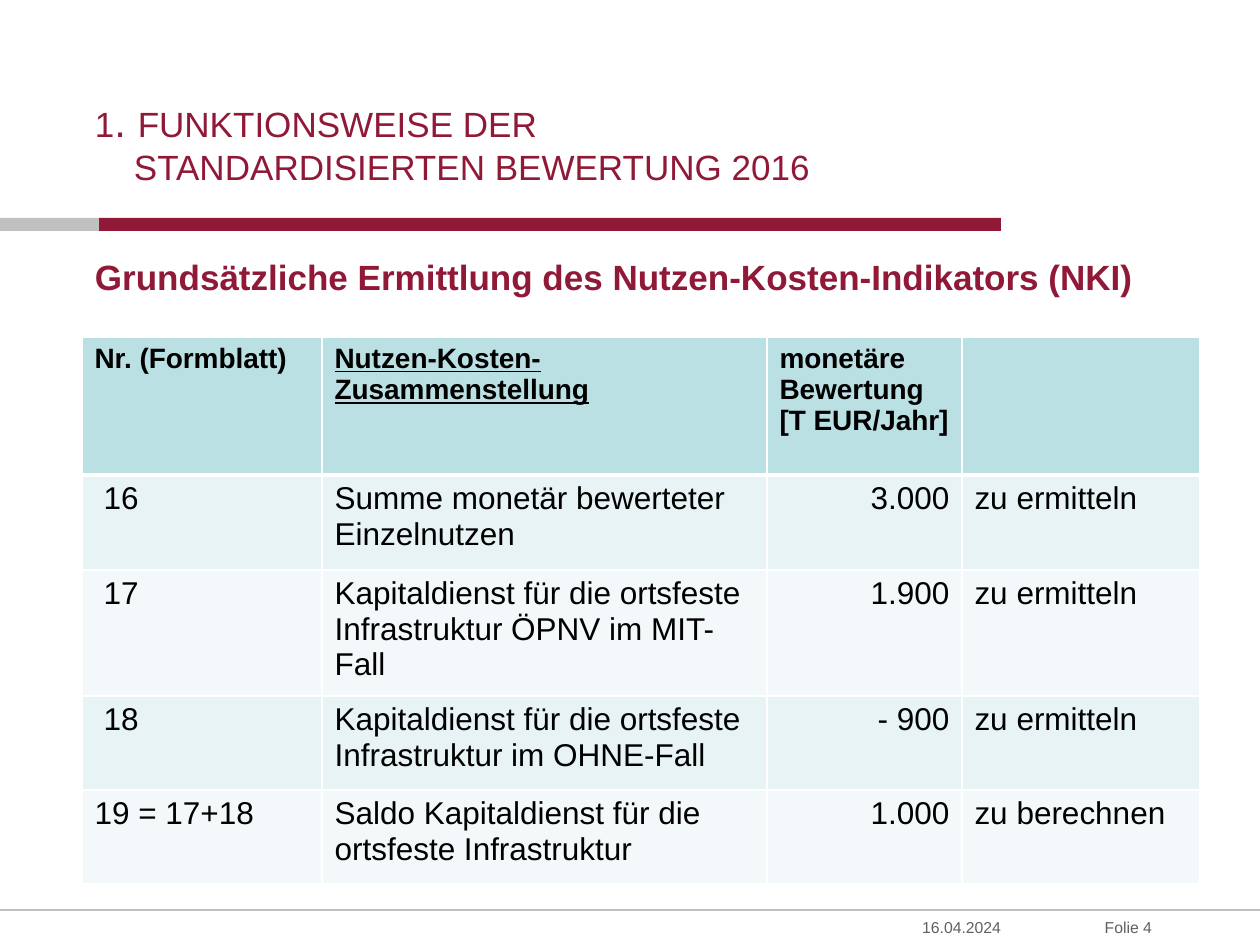
from dataclasses import dataclass

from lxml import etree
from pptx import Presentation
from pptx import util as u
from pptx.dml.color import RGBColor
from pptx.enum import shapes, text
from pptx.oxml.ns import qn

PX = 914400 / 126


@dataclass(frozen=True)
class Theme:
    font: str = "Arial"
    accent: str = "8F1936"
    grey: str = "C0C0C0"
    muted: str = "606060"
    ink: str = "000000"
    border: str = "FFFFFF"
    header: str = "BBE0E3"
    bands: tuple = ("E7F3F4", "F3F9FA")
    heading: int = 20
    number_dot: int = 24
    column_head: int = 16
    body: int = 18
    footer: int = 9


THEME = Theme()
COLUMNS = (240, 445, 195, 238)
ROWS = (138, 95, 118, 94, 94)
HEADERS = (
    "Nr. (Formblatt)",
    "Nutzen-Kosten-Zusammenstellung",
    "monetäre Bewertung\v[T EUR/Jahr]",
    "",
)
ENTRIES = (
    ("16", "Summe monetär bewerteter Einzelnutzen", "3.000", "zu ermitteln"),
    ("17", "Kapitaldienst für die ortsfeste Infrastruktur ÖPNV im MIT-Fall",
     "1.900", "zu ermitteln"),
    ("18", "Kapitaldienst für die ortsfeste Infrastruktur im OHNE-Fall",
     "- 900", "zu ermitteln"),
    ("19 = 17+18", "Saldo Kapitaldienst für die ortsfeste Infrastruktur",
     "1.000", "zu berechnen"),
)


def px(length):
    return u.Emu(round(length * PX))


def emu_box(box):
    return [px(length) for length in box]


def style_font(font, size, color, **formats):
    values = {"name": THEME.font, "size": u.Pt(size), **formats}
    for name, value in values.items():
        setattr(font, name, value)
    font.color.rgb = RGBColor.from_string(color)


def indent(paragraph, left, first=0):
    properties = paragraph._p.get_or_add_pPr()
    properties.set("marL", str(px(left)))
    properties.set("indent", str(px(first)))


def add_text_box(slide, box, anchor):
    """Add a wrapping text box without margins and return its paragraph."""
    frame = slide.shapes.add_textbox(*emu_box(box)).text_frame
    formats = {"word_wrap": True, "vertical_anchor": anchor,
               "margin_left": 0, "margin_right": 0,
               "margin_top": 0, "margin_bottom": 0}
    for name, value in formats.items():
        setattr(frame, name, value)
    return frame.paragraphs[0]


def add_title(slide, box):
    paragraph = add_text_box(slide, box, text.MSO_ANCHOR.BOTTOM)
    indent(paragraph, 39, -39)
    for words, size in (("1", THEME.heading), (". ", THEME.number_dot),
                        ("FUNKTIONSWEISE DER", THEME.heading)):
        run = paragraph.add_run()
        run.text = words
        style_font(run.font, size, THEME.accent)
    paragraph.add_line_break()
    run = paragraph.add_run()
    run.text = "STANDARDISIERTEN BEWERTUNG 2016"
    style_font(run.font, THEME.heading, THEME.accent)


def add_title_bar(slide, box, grey_width):
    left, top, width, height = box
    parts = ((left, grey_width, THEME.grey),
             (left + grey_width, width - grey_width, THEME.accent))
    for part_left, part_width, color in parts:
        shape = slide.shapes.add_shape(
            shapes.MSO_SHAPE.RECTANGLE,
            *emu_box((part_left, top, part_width, height)))
        shape.shadow.inherit = False
        shape.fill.solid()
        shape.fill.fore_color.rgb = RGBColor.from_string(color)
        shape.line.fill.background()


def add_subtitle(slide, box):
    paragraph = add_text_box(slide, box, text.MSO_ANCHOR.TOP)
    paragraph.line_spacing = 0.9
    run = paragraph.add_run()
    run.text = "Grundsätzliche Ermittlung des Nutzen-Kosten-Indikators (NKI)"
    style_font(run.font, THEME.heading, THEME.accent, bold=True)


def set_borders(cell, bottom):
    """Draw the cell's four edges; the bottom one has its own width."""
    properties = cell._tc.get_or_add_tcPr()
    edges = (("lnL", 1), ("lnR", 1), ("lnT", 1), ("lnB", bottom))
    for position, (edge, width) in enumerate(edges):
        line = etree.Element(qn(f"a:{edge}"), w=str(u.Pt(width)))
        fill = etree.SubElement(line, qn("a:solidFill"))
        etree.SubElement(fill, qn("a:srgbClr"), val=THEME.border)
        properties.insert(position, line)


def fill_cell(cell, words, row, column):
    is_header = row == 0
    cell.fill.solid()
    cell.fill.fore_color.rgb = RGBColor.from_string(
        THEME.header if is_header else THEME.bands[(row - 1) % 2])
    set_borders(cell, 3 if is_header or row == 0 else 1)
    if row == 1:
        cell._tc.tcPr.find(qn("a:lnT")).set("w", str(u.Pt(3)))
    cell.text = words
    paragraph = cell.text_frame.paragraphs[0]
    if not is_header and column == 2:
        paragraph.alignment = text.PP_ALIGN.RIGHT
    if words.isdigit():
        indent(paragraph, 9)
    for run in paragraph.runs:
        style_font(run.font, THEME.column_head if is_header else THEME.body,
                   THEME.ink, bold=is_header,
                   underline=is_header and column == 1)


def add_indicator_table(slide, left, top):
    box = (left, top, sum(COLUMNS), sum(ROWS))
    table = slide.shapes.add_table(
        len(ROWS), len(COLUMNS), *emu_box(box)).table
    for column, width in zip(table.columns, COLUMNS):
        column.width = px(width)
    for row, height in zip(table.rows, ROWS):
        row.height = px(height)
    for row, entry in enumerate((HEADERS, *ENTRIES)):
        for column, words in enumerate(entry):
            fill_cell(table.cell(row, column), words, row, column)


def add_footer(slide, box):
    left, top, width, height = box
    rule = slide.shapes.add_connector(
        shapes.MSO_CONNECTOR.STRAIGHT, px(left), px(top),
        px(left + width), px(top))
    rule.line.color.rgb = RGBColor.from_string(THEME.grey)
    rule.line.width = u.Pt(0.75)
    etree.SubElement(rule._element.spPr, qn("a:effectLst"))
    for words, offset, label_width in (("16.04.2024", 828, 173),
                                       ("Folie 4", 1001, 151)):
        paragraph = add_text_box(
            slide, (left + offset, top, label_width, height),
            text.MSO_ANCHOR.MIDDLE)
        paragraph.alignment = text.PP_ALIGN.RIGHT
        run = paragraph.add_run()
        run.text = words
        style_font(run.font, THEME.footer, THEME.muted)


def main():
    presentation = Presentation()
    presentation.slide_width = px(1260)
    presentation.slide_height = px(945)
    slide = presentation.slides.add_slide(presentation.slide_layouts[6])
    add_title_bar(slide, (0, 218, 1001, 13), 99)
    add_footer(slide, (0, 910, 1260, 35))
    add_title(slide, (95, 60, 805, 128))
    add_subtitle(slide, (95, 260, 1066, 60))
    add_indicator_table(slide, 82, 337)
    presentation.save("out.pptx")


if __name__ == "__main__":
    main()
